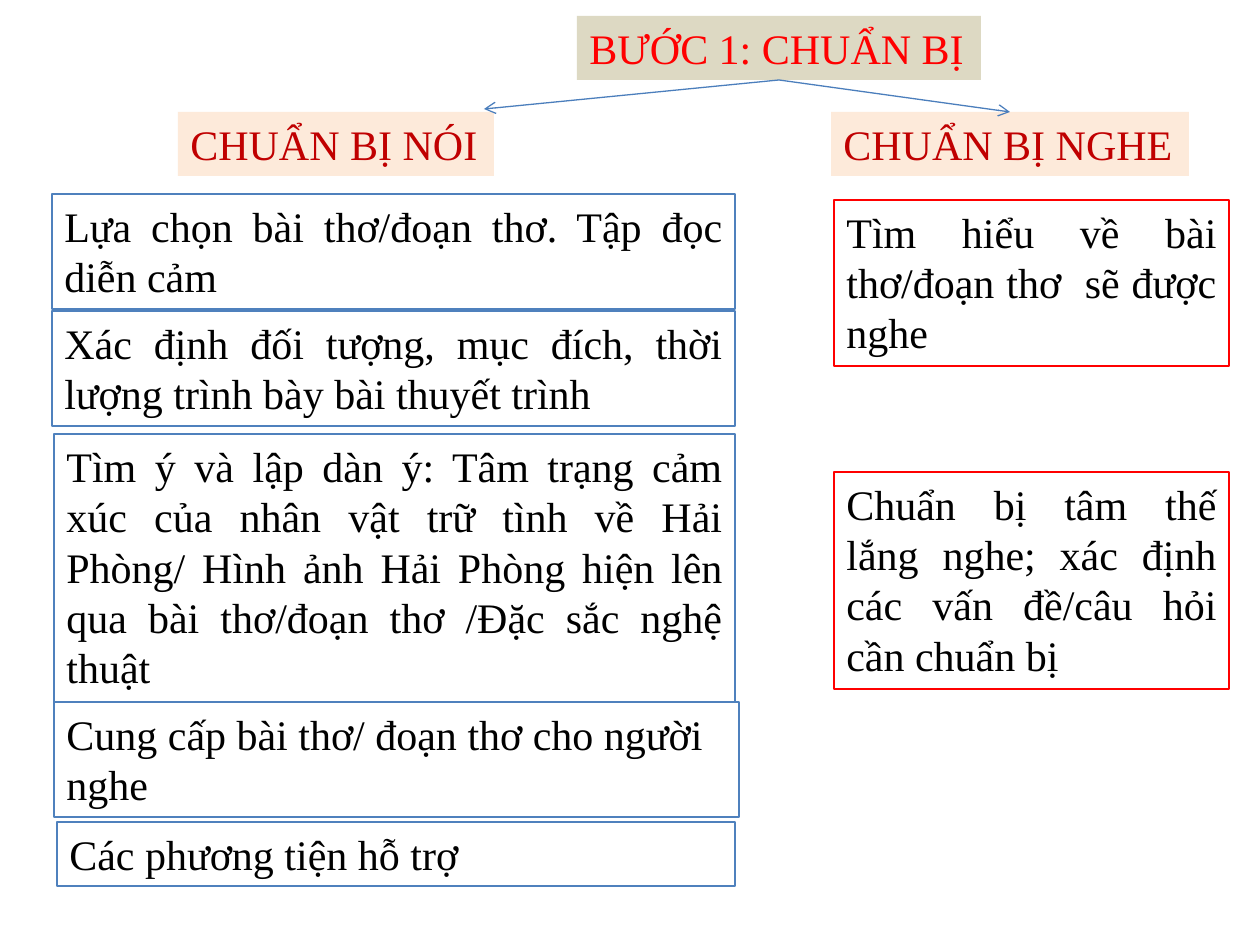
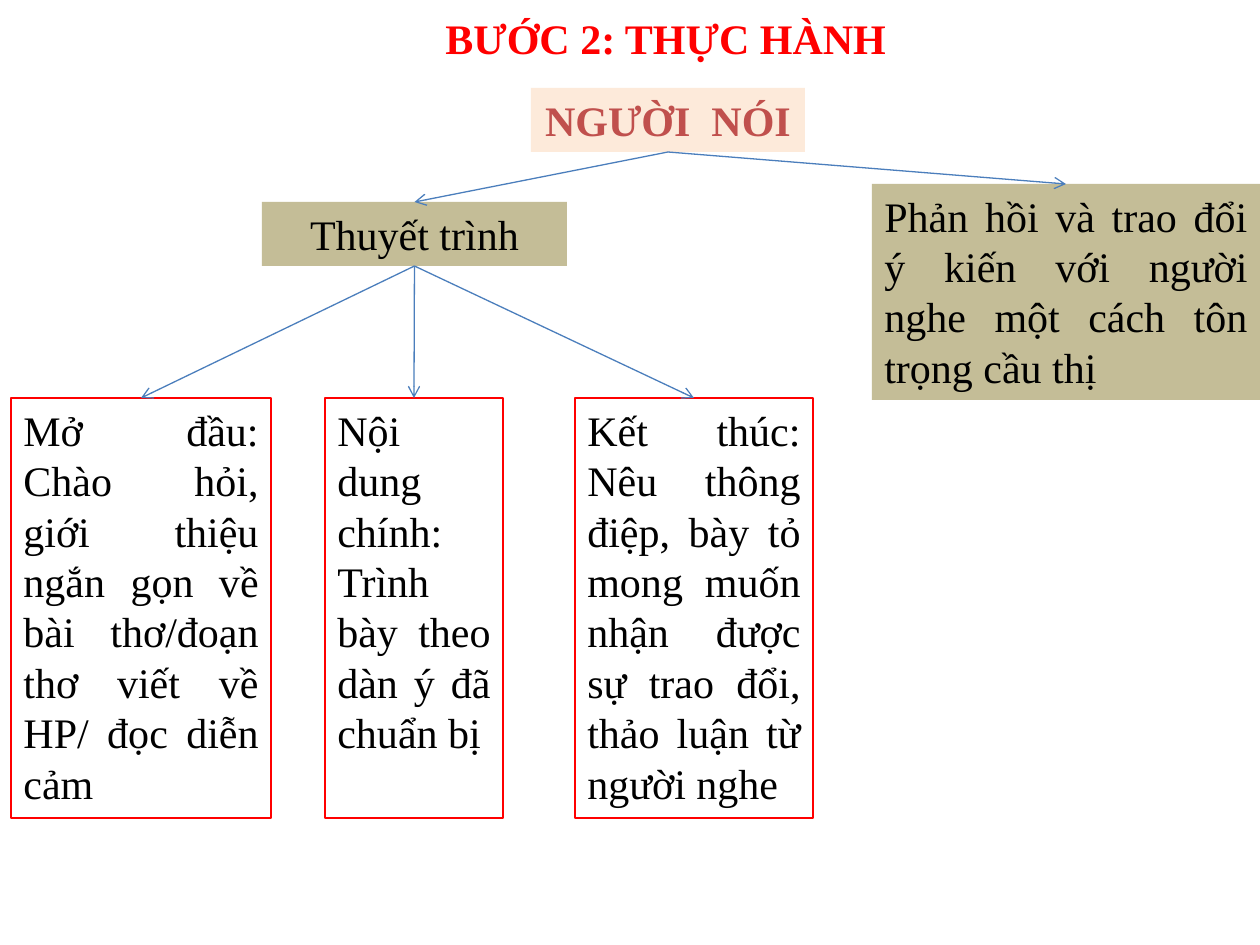
from dataclasses import dataclass

from lxml.etree import SubElement
from pptx import Presentation
from pptx.dml.color import RGBColor
from pptx.enum.shapes import MSO_CONNECTOR as CONN, MSO_SHAPE as SHAPE
from pptx.enum.text import MSO_ANCHOR as ANCHOR, MSO_AUTO_SIZE as FIT, PP_ALIGN as ALIGN
from pptx.oxml.ns import qn
from pptx.util import Emu, Pt


@dataclass(frozen=True)
class Theme:
    font: str = "Times New Roman"
    size: int = 24
    stroke: float = 0.75
    text: str = "000000"
    red: str = "FF0000"
    dark_red: str = "C00000"
    brick: str = "C0504D"
    blue: str = "4F81BD"
    arrow: str = "4B7EBC"
    sand: str = "DDD9C3"
    khaki: str = "C4BD97"
    peach: str = "FDEADA"


T = Theme()
SLIDE_W, SLIDE_H = 1260, 945
ROW_H = 64
TOP, BOTTOM = 0, 2


def px(n):
    return Emu(round(n * 914400 / 126))


def rgb(value):
    return RGBColor.from_string(value)


def write(sp, text, color=T.text, bold=False, align=ALIGN.LEFT, wrap=True):
    tf = sp.text_frame
    tf.word_wrap = wrap
    tf.auto_size = FIT.NONE
    tf.vertical_anchor = ANCHOR.TOP
    p = tf.paragraphs[0]
    p.alignment = align
    r = p.add_run()
    r.text = text
    r.font.name = T.font
    r.font.size = Pt(T.size)
    r.font.bold = bold
    r.font.color.rgb = rgb(color)


def add_box(slide, box, text, fill=None, line=None, **fmt):
    sp = slide.shapes.add_shape(SHAPE.RECTANGLE, *map(px, box))
    sp.shadow.inherit = False
    if fill:
        sp.fill.solid()
        sp.fill.fore_color.rgb = rgb(fill)
    else:
        sp.fill.background()
    if line:
        sp.line.color.rgb = rgb(line)
        sp.line.width = Pt(T.stroke)
    else:
        sp.line.fill.background()
    write(sp, text, **fmt)
    return sp


def add_arrow(slide, source, target=None, end=(0, 0)):
    x, y = map(px, end)
    cxn = slide.shapes.add_connector(CONN.STRAIGHT, x, y, x, y)
    cxn.begin_connect(source, BOTTOM)
    if target is not None:
        cxn.end_connect(target, TOP)
    cxn.line.color.rgb = rgb(T.arrow)
    cxn.line.width = Pt(T.stroke)
    SubElement(cxn.line._get_or_add_ln(), qn("a:tailEnd"), type="arrow")
    SubElement(cxn._element.spPr, qn("a:effectLst"))


def speaking_column(slide, x, y):
    add_box(slide, (x + 126, y, 316, ROW_H), "CHUẨN BỊ NÓI",
            fill=T.peach, color=T.dark_red, wrap=False)
    steps = [
        (0, 82, 683, 115, ALIGN.JUSTIFY, "Lựa chọn bài thơ/đoạn thơ. Tập đọc diễn cảm"),
        (0, 199, 683, 115, ALIGN.JUSTIFY,
         "Xác định đối tượng, mục đích, thời lượng trình bày bài thuyết trình"),
        (2, 322, 681, 268, ALIGN.JUSTIFY,
         "Tìm ý và lập dàn ý: Tâm trạng cảm xúc của nhân vật trữ tình về Hải Phòng/ "
         "Hình ảnh Hải Phòng hiện lên qua bài thơ/đoạn thơ /Đặc sắc nghệ thuật"),
        (2, 590, 685, 115, ALIGN.LEFT, "Cung cấp bài thơ/ đoạn thơ cho người nghe"),
        (5, 710, 678, ROW_H, ALIGN.LEFT, "Các phương tiện hỗ trợ"),
    ]
    for dx, dy, w, h, align, text in steps:
        add_box(slide, (x + dx, y + dy, w, h), text, line=T.blue, align=align)


def listening_column(slide, x, y):
    heading = add_box(slide, (x, y, 358, ROW_H), "CHUẨN BỊ NGHE",
                      fill=T.peach, color=T.dark_red, wrap=False)
    steps = [
        (88, 166, "Tìm hiểu về bài thơ/đoạn thơ  sẽ được nghe"),
        (360, 217, "Chuẩn bị tâm thế lắng nghe; xác định các vấn đề/câu hỏi cần chuẩn bị"),
    ]
    for dy, h, text in steps:
        add_box(slide, (x + 3, y + dy, 395, h), text, line=T.red, align=ALIGN.JUSTIFY)
    return heading


def preparation_slide(slide):
    title = add_box(slide, (577, 16, 404, ROW_H), "BƯỚC 1: CHUẨN BỊ",
                    fill=T.sand, color=T.red, wrap=False)
    speaking_column(slide, 52, 112)
    listening = listening_column(slide, 831, 112)
    add_arrow(slide, title, end=(484, 109))
    add_arrow(slide, title, listening)


def presentation_branch(slide, x, y):
    root = add_box(slide, (x + 251, y, 305, ROW_H), "Thuyết trình",
                   fill=T.khaki, align=ALIGN.CENTER)
    parts = [
        (0, 260, "Mở đầu: Chào hỏi, giới thiệu ngắn gọn về bài thơ/đoạn thơ viết về HP/ "
                 "đọc diễn cảm"),
        (314, 178, "Nội dung chính: Trình bày theo dàn ý đã chuẩn bị"),
        (564, 238, "Kết thúc: Nêu thông điệp, bày tỏ mong muốn nhận được sự trao đổi, "
                   "thảo luận từ người nghe"),
    ]
    for dx, w, text in parts:
        part = add_box(slide, (x + dx, y + 196, w, 420), text,
                       line=T.red, align=ALIGN.JUSTIFY)
        add_arrow(slide, root, part)
    return root


def practice_slide(slide):
    title = slide.shapes.add_textbox(*map(px, (433, 6, 470, ROW_H)))
    write(title, "BƯỚC 2: THỰC HÀNH", color=T.red, bold=True, wrap=False)
    speaker = add_box(slide, (531, 88, 274, ROW_H), "NGƯỜI  NÓI", fill=T.peach,
                      color=T.brick, bold=True, align=ALIGN.CENTER, wrap=False)
    talk = presentation_branch(slide, 11, 202)
    feedback = add_box(slide, (872, 184, 388, 216),
                       "Phản hồi và trao đổi ý kiến với người nghe một cách tôn trọng cầu thị",
                       fill=T.khaki, align=ALIGN.JUSTIFY)
    for branch in (talk, feedback):
        add_arrow(slide, speaker, branch)


def main():
    prs = Presentation()
    prs.slide_width, prs.slide_height = px(SLIDE_W), px(SLIDE_H)
    for build in (preparation_slide, practice_slide):
        build(prs.slides.add_slide(prs.slide_layouts[6]))
    prs.save("out.pptx")


if __name__ == "__main__":
    main()
